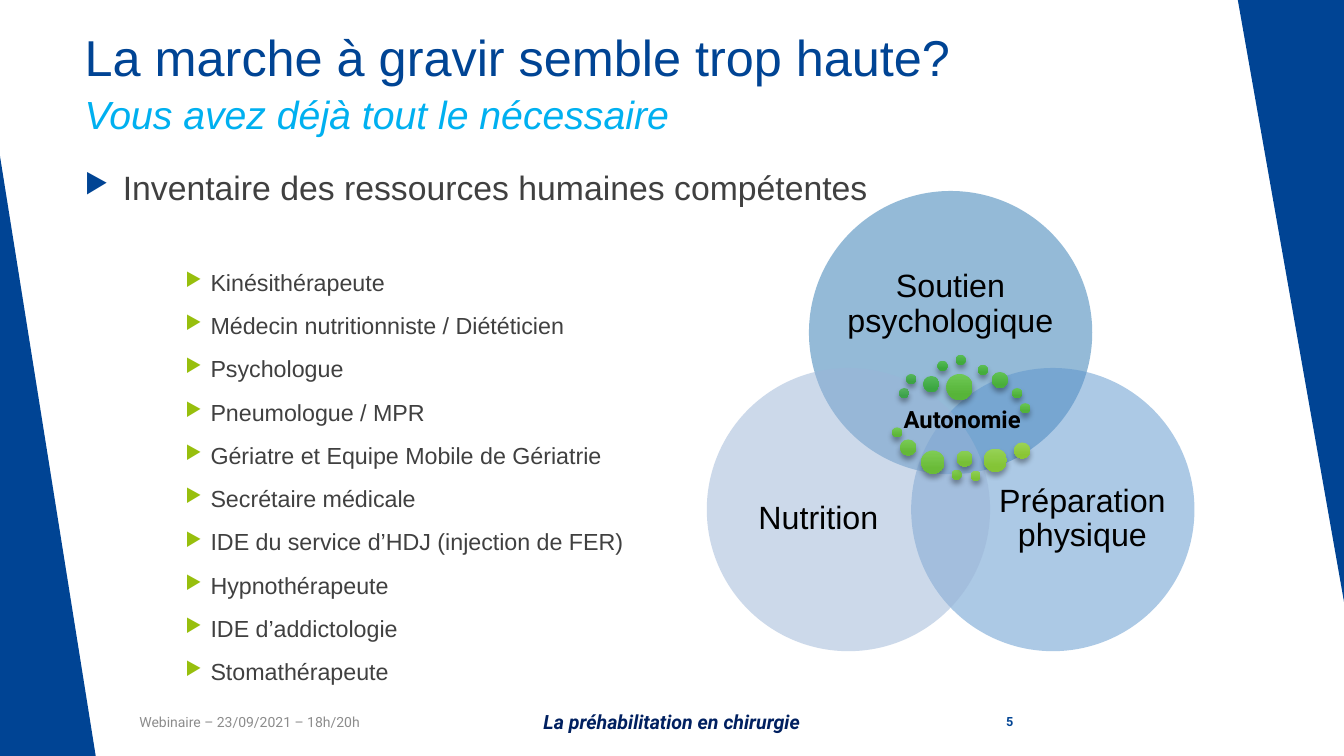
from dataclasses import dataclass
from math import cos, radians, sin

from lxml.etree import SubElement
from pptx import Presentation
from pptx.dml.color import RGBColor
from pptx.enum.shapes import MSO_SHAPE as Preset
from pptx.enum.text import MSO_ANCHOR as Anchor, MSO_AUTO_SIZE as AutoSize, PP_ALIGN as Align
from pptx.oxml.ns import qn
from pptx.util import Inches, Pt

BLUE = RGBColor(0x00, 0x44, 0x94)
CYAN = RGBColor(0x00, 0xB0, 0xF0)
NAVY = RGBColor(0x00, 0x20, 0x60)
GREEN = RGBColor(0x97, 0xBF, 0x0D)
DARK = RGBColor(0x40, 0x40, 0x40)
GREY = RGBColor(0x8C, 0x8C, 0x8C)
BLACK = RGBColor(0x00, 0x00, 0x00)
STEEL = RGBColor(0x2A, 0x77, 0xB1)
SKY = RGBColor(0x5B, 0x94, 0xCC)
MIST = RGBColor(0x9B, 0xB5, 0xD7)

# Dot number, upper and lower gradient colour; dots in between are blended
DOT_COLOURS = [
    (0, RGBColor(0x56, 0xB4, 0x61), RGBColor(0x3C, 0xA1, 0x4A)),
    (3, RGBColor(0x55, 0xBB, 0x56), RGBColor(0x3B, 0xA8, 0x3C)),
    (9, RGBColor(0x6D, 0xC8, 0x54), RGBColor(0x57, 0xB4, 0x39)),
    (17, RGBColor(0x9C, 0xD3, 0x56), RGBColor(0x8A, 0xC6, 0x35)),
]


@dataclass(frozen=True)
class Box:
    """Left and width in % of slide width, top and height in % of slide height."""
    left: float
    top: float
    width: float
    height: float


@dataclass(frozen=True)
class Label:
    text: str
    box: Box
    size: float
    colour: RGBColor = BLACK
    font: str = "Roboto"
    bold: bool = False
    italic: bool = False
    align: Align = Align.CENTER
    spacing: float = 1.0
    inset: float | None = None


@dataclass(frozen=True)
class Pillar:
    angle: float
    colour: RGBColor
    label: Label


@dataclass(frozen=True)
class Dot:
    x: float
    y: float
    size: float


def pillar_label(text: str, box: Box) -> Label:
    return Label(text, box, 23, font="Arial", spacing=0.9, inset=0)


# Dot diameters, in % of slide width
SMALL, MEDIUM, LARGE, LARGEST = 0.75, 1.2, 1.73, 1.95
DOTS = [
    Dot(67.28, 52, SMALL), Dot(67.8, 50.13, SMALL), Dot(69.3, 50.8, MEDIUM),
    Dot(70.13, 48.4, SMALL), Dot(71.48, 47.6, SMALL), Dot(73.13, 48.93, SMALL),
    Dot(74.4, 50.27, MEDIUM), Dot(75.68, 52, SMALL), Dot(76.28, 54, SMALL),
    Dot(71.4, 51.2, LARGEST), Dot(66.75, 57.2, SMALL), Dot(67.58, 59.2, MEDIUM),
    Dot(69.41, 61.13, LARGE), Dot(71.18, 62.8, SMALL), Dot(71.78, 60.67, MEDIUM),
    Dot(72.6, 62.93, SMALL), Dot(74.06, 60.87, LARGE), Dot(76.05, 59.6, MEDIUM),
]
# Venn diagram: centre, distance of the circles from it, circle diameter
VENN_X, VENN_Y, VENN_RADIUS, VENN_DIAMETER = 70.73, 59.6, 8.78, 21.08
PILLARS = [
    Pillar(-90, STEEL, pillar_label("Soutien psychologique", Box(63, 31.87, 15.45, 16.8))),
    Pillar(30, SKY, pillar_label("Préparation physique", Box(74.25, 58.4, 12.6, 20.53))),
    Pillar(150, MIST, pillar_label("Nutrition", Box(54.6, 58.4, 12.6, 20.53))),
]
AUTONOMY = Label("Autonomie", Box(66.9, 52.93, 9.38, 5.47), 17, bold=True, spacing=0.9, inset=0.02)
FOOTER = [
    Label("5", Box(70.5, 92.8, 5.63, 5.33), 9, BLUE, bold=True, align=Align.RIGHT),
    Label("Webinaire – 23/09/2021 – 18h/20h", Box(7.73, 92.8, 21.68, 5.33), 10, GREY),
    Label("La préhabilitation en chirurgie", Box(31.5, 92.8, 36.98, 5.33), 14, NAVY,
          bold=True, italic=True),
]
STAFF = [
    "Kinésithérapeute", "Médecin nutritionniste / Diététicien", "Psychologue",
    "Pneumologue / MPR", "Gériatre et Equipe Mobile de Gériatrie", "Secrétaire médicale",
    "IDE du service d’HDJ (injection de FER)", "Hypnothérapeute", "IDE d’addictologie",
    "Stomathérapeute",
]

prs = Presentation()
prs.slide_width, prs.slide_height = Inches(13.33), Inches(7.5)
slide = prs.slides.add_slide(prs.slide_layouts[5])
shapes = slide.shapes


def across(share: float) -> int:
    return round(prs.slide_width * share / 100)


def down(share: float) -> int:
    return round(prs.slide_height * share / 100)


def place(box: Box) -> tuple[int, int, int, int]:
    return across(box.left), down(box.top), across(box.width), down(box.height)


def add_plain(preset: Preset, frame: tuple[int, int, int, int]):
    shape = shapes.add_shape(preset, *frame)
    shape.shadow.inherit = False
    shape.line.fill.background()
    return shape


def add_triangle(box: Box, rotation: float) -> None:
    triangle = add_plain(Preset.RIGHT_TRIANGLE, place(box))
    triangle.rotation = rotation
    triangle.fill.solid()
    triangle.fill.fore_color.rgb = BLUE


def add_circle(x: int, y: int, diameter: int):
    return add_plain(Preset.OVAL, (x - diameter // 2, y - diameter // 2, diameter, diameter))


def add_label(label: Label) -> None:
    frame = shapes.add_textbox(*place(label.box)).text_frame
    frame.word_wrap = True
    frame.vertical_anchor = Anchor.MIDDLE
    if label.inset is not None:
        frame.margin_left = frame.margin_right = Inches(label.inset)
        frame.margin_top = frame.margin_bottom = Inches(label.inset)
    para = frame.paragraphs[0]
    para.text, para.alignment, para.line_spacing = label.text, label.align, label.spacing
    font = para.font
    font.name, font.size, font.color.rgb = label.font, Pt(label.size), label.colour
    font.bold, font.italic = label.bold, label.italic


def write_bullet(para, text: str, size: float, colour: RGBColor, margin: float, hang: float,
                 before: float) -> None:
    para.text, para.line_spacing, para.space_before = text, 1.05, Pt(before)
    props = para._p.get_or_add_pPr()
    props.set("marL", str(Inches(margin)))
    props.set("indent", str(-Inches(hang)))
    SubElement(SubElement(props, qn("a:buClr")), qn("a:srgbClr"), val=str(colour))
    SubElement(props, qn("a:buSzPct"), val="80000")
    SubElement(props, qn("a:buChar"), char="▶")
    para.font.name, para.font.size, para.font.color.rgb = "Arial", Pt(size), DARK


def add_pillar(pillar: Pillar) -> None:
    turn, reach = radians(pillar.angle), across(VENN_RADIUS)
    circle = add_circle(round(across(VENN_X) + reach * cos(turn)),
                        round(down(VENN_Y) + reach * sin(turn)), across(VENN_DIAMETER))
    circle.fill.solid()
    circle.fill.fore_color.rgb = pillar.colour
    tint = circle._element.spPr.find(qn("a:solidFill"))[0]
    SubElement(tint, qn("a:alpha"), val="50000")
    add_label(pillar.label)


def blend(start: RGBColor, end: RGBColor, share: float) -> RGBColor:
    return RGBColor(*(round(a + (b - a) * share) for a, b in zip(start, end)))


def add_dot(number: int, dot: Dot) -> None:
    circle = add_circle(across(dot.x), down(dot.y), across(dot.size))
    first, last = next(pair for pair in zip(DOT_COLOURS, DOT_COLOURS[1:]) if number <= pair[1][0])
    share = (number - first[0]) / (last[0] - first[0])
    circle.fill.gradient()
    circle.fill.gradient_angle = 270
    for stop, position, level in zip(circle.fill.gradient_stops, (0, 0.78), (1, 2)):
        stop.position = position
        stop.color.rgb = blend(first[level], last[level], share)
    effects = circle._element.spPr.find(qn("a:effectLst"))
    shadow = SubElement(effects, qn("a:outerShdw"), blurRad=str(Pt(4)), dist=str(Pt(3)),
                        dir="5400000", rotWithShape="0")
    SubElement(SubElement(shadow, qn("a:srgbClr"), val=str(BLACK)), qn("a:alpha"), val="35000")


# Side triangles
add_triangle(Box(0, 20.67, 7.12, 79.33), 0)
add_triangle(Box(92.1, 0, 7.9, 79.6), 180)

# Title and subtitle
title = shapes.title
title.left, title.top, title.width, title.height = place(Box(5.55, 2.27, 70.5, 19.2))
title.text_frame.auto_size = AutoSize.NONE
title.text_frame.vertical_anchor = Anchor.TOP
heading = title.text_frame.paragraphs[0]
heading.alignment, heading.line_spacing = Align.LEFT, 1.07
heading.font.name, heading.font.size, heading.font.color.rgb = "Arial", Pt(36), BLUE
heading.add_run().text = "La marche à gravir semble trop haute?"
heading.add_line_break()
subtitle = heading.add_run()
subtitle.text = "Vous avez déjà tout le nécessaire"
subtitle.font.size, subtitle.font.italic, subtitle.font.color.rgb = Pt(28), True, CYAN

# Venn diagram
for pillar in PILLARS:
    add_pillar(pillar)

# Staff list
inventory = shapes.add_textbox(*place(Box(5.55, 21.2, 72.3, 66.27))).text_frame
inventory.word_wrap = True
write_bullet(inventory.paragraphs[0], "Inventaire des ressources humaines compétentes",
             24.1, BLUE, 0.38, 0.38, 0)
for row, role in enumerate(STAFF):
    write_bullet(inventory.add_paragraph(), role, 16.6, GREEN, 1.25, 0.25, 10 if row else 42)

# Footer
for note in FOOTER:
    add_label(note)

# Autonomy, ringed by dots
add_label(AUTONOMY)
for number, dot in enumerate(DOTS):
    add_dot(number, dot)

prs.save("out.pptx")
